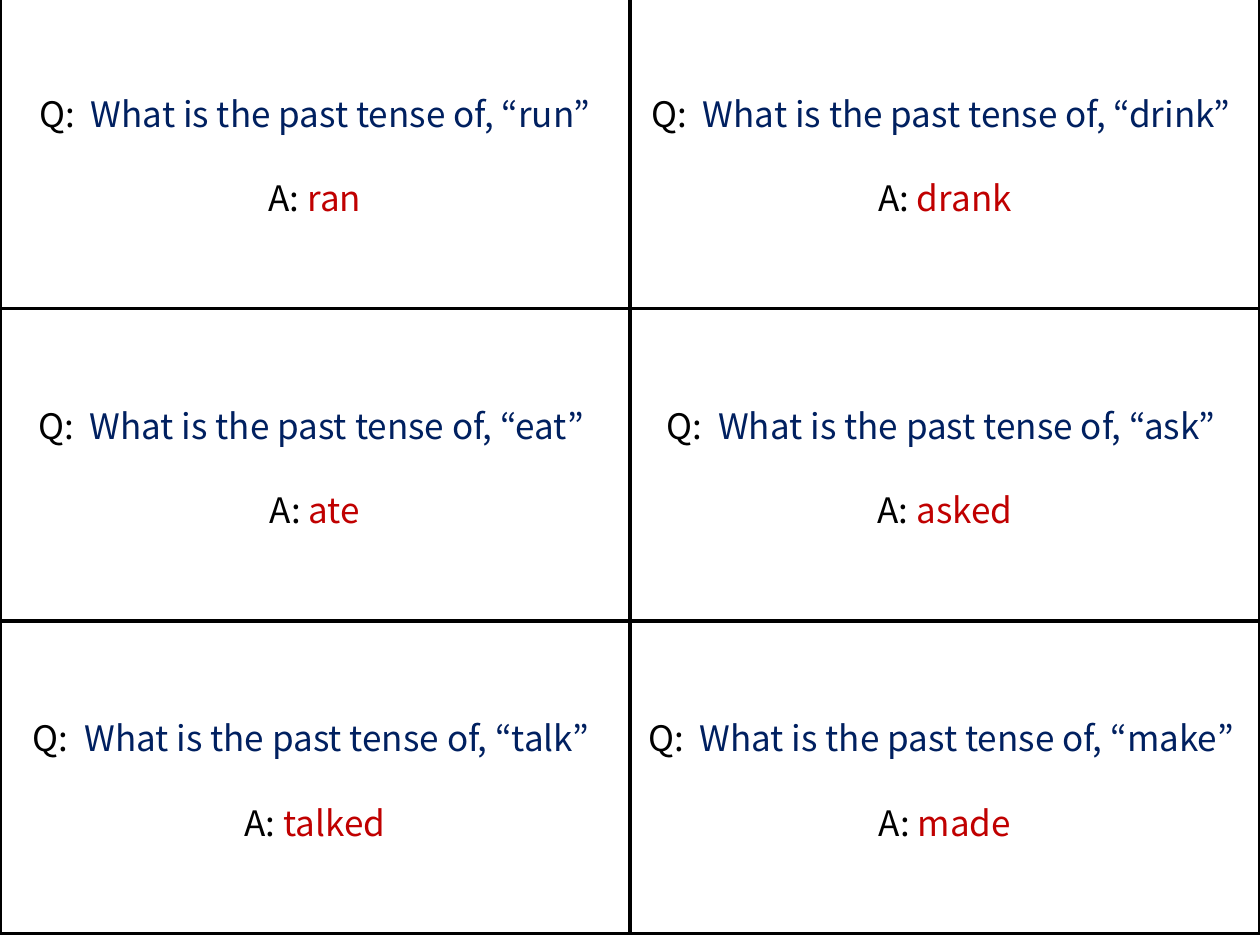
from pptx import Presentation
from pptx.dml.color import RGBColor
from pptx.enum.shapes import MSO_SHAPE
from pptx.enum.text import MSO_ANCHOR, PP_ALIGN
from pptx.util import Inches, Pt

COLORS = {
    "card": "FFFFFF",
    "border": "000000",
    "label": "000000",
    "question": "002060",
    "answer": "C00000",
}
COLS, ROWS = 2, 3
CARD_W, CARD_H = 5, 2.48
TOP = -0.03

# Quoted verb with its trailing spacing, and its past tense; one list per column
VERBS = [
    [("“run”", "ran"), ("“eat” ", "ate"), ("“talk” ", "talked")],
    [("“drink” ", "drank"), ("“ask” ", "asked"), ("“make” ", "made")],
]


def rgb(name):
    return RGBColor.from_string(COLORS[name])


class CardSheet:
    font = "Noto Sans CJK KR"
    size = Pt(20)
    leading = Pt(24)
    border = Pt(2)

    def __init__(self, slide):
        self.slide = slide

    def line(self, p, *parts):
        """Fill a paragraph with (text, colour name) runs."""
        p.alignment = PP_ALIGN.CENTER
        p.line_spacing = self.leading
        p.font.name, p.font.size = self.font, self.size
        for text, color in parts:
            r = p.add_run()
            r.text = text
            r.font.color.rgb = rgb(color)

    def card(self, col, row, verb, past):
        sp = self.slide.shapes.add_shape(
            MSO_SHAPE.RECTANGLE,
            Inches(col * CARD_W), Inches(TOP + row * CARD_H),
            Inches(CARD_W), Inches(CARD_H))
        sp.shadow.inherit = False
        sp.fill.solid()
        sp.fill.fore_color.rgb = rgb("card")
        sp.line.color.rgb = rgb("border")
        sp.line.width = self.border

        tf = sp.text_frame
        tf.word_wrap = True
        tf.vertical_anchor = MSO_ANCHOR.MIDDLE
        tf.margin_top = Inches(0.09)
        self.line(tf.paragraphs[0], ("Q:  ", "label"),
                  (f"What is the past tense of, {verb}", "question"))
        p = tf.add_paragraph()
        p.space_before = self.leading
        self.line(p, ("A: ", "label"), (past, "answer"))


def main():
    prs = Presentation()
    prs.slide_width, prs.slide_height = Inches(10), Inches(7.5)
    sheet = CardSheet(prs.slides.add_slide(prs.slide_layouts[6]))
    for col in range(COLS):
        for row in range(ROWS):
            sheet.card(col, row, *VERBS[col][row])
    prs.save("out.pptx")


if __name__ == "__main__":
    main()
